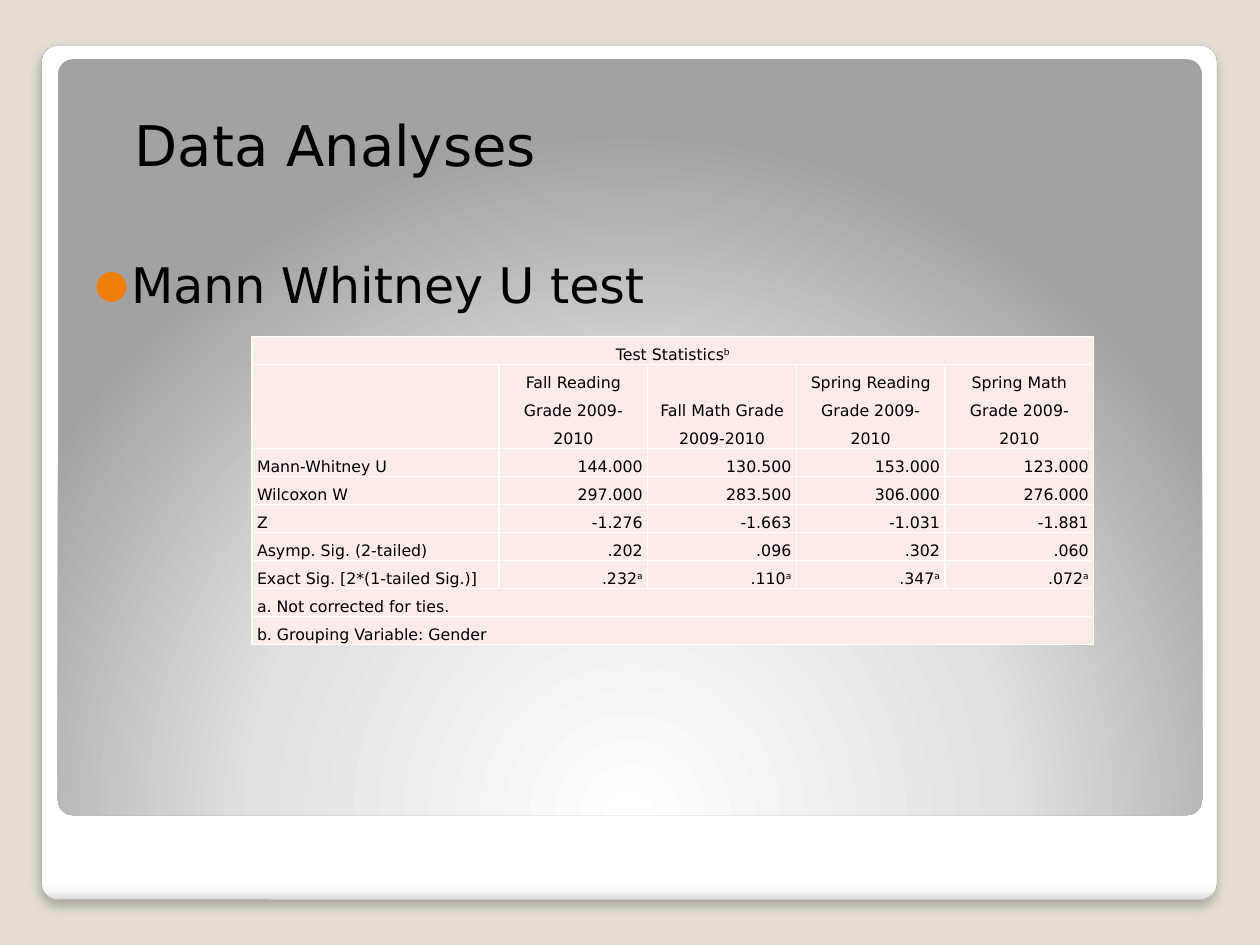
from dataclasses import dataclass

from lxml import etree
from pptx import Presentation
from pptx import util as u
from pptx.dml.color import RGBColor
from pptx.enum import shapes, text
from pptx.oxml import ns


@dataclass(frozen=True)
class Theme:
    font: str = "DejaVu Sans"
    ink: str = "000000"
    background: str = "E3DED1"
    card_edge: str = "A4A4A4"
    bullet: str = "F07F09"
    cell: str = "FCECE7"
    border: str = "FFFFFF"
    card_stops: tuple = ((0, "FFFFFF"), (98, "FFFFFF"), (99, "F7F7F7"), (100, "DADADA"))
    panel_stops: tuple = ((0, "FFFFFF"), (55, "E1E1E1"), (100, "A2A2A2"))
    title_size: int = 32
    body_size: int = 28
    table_size: int = 9
    table_leading: int = 16


THEME = Theme()
ALIGN = text.PP_ALIGN
ANCHOR = text.MSO_ANCHOR

HEADERS = ["", "Fall Reading Grade 2009-2010", "Fall Math Grade 2009-2010",
           "Spring Reading Grade 2009-2010", "Spring Math Grade 2009-2010"]
# A caret marks the start of a superscript
RESULTS = [
    ["Mann-Whitney U", "144.000", "130.500", "153.000", "123.000"],
    ["Wilcoxon W", "297.000", "283.500", "306.000", "276.000"],
    ["Z", "-1.276", "-1.663", "-1.031", "-1.881"],
    ["Asymp. Sig. (2-tailed)", ".202", ".096", ".302", ".060"],
    ["Exact Sig. [2*(1-tailed Sig.)]", ".232^a", ".110^a", ".347^a", ".072^a"],
]
TABLE_ROWS = [["Test Statistics^b"], HEADERS, *RESULTS,
              ["a. Not corrected for ties."], ["b. Grouping Variable: Gender"]]


def xml(markup):
    """Turn DrawingML markup into an element, with its namespace declared."""
    return etree.fromstring(f"<root {ns.nsdecls('a')}>{markup}</root>")[0]


def write_text(frame, content, size, align=ALIGN.LEFT, leading=None, before=None):
    paragraph = frame.paragraphs[0]
    paragraph.alignment = align
    if leading:
        paragraph.line_spacing = u.Pt(leading)
    if before:
        paragraph.space_before = u.Pt(before)
    for index, part in enumerate(content.split("^")):
        run = paragraph.add_run()
        run.text = part
        run.font.name = THEME.font
        run.font.size = u.Pt(size)
        run.font.color.rgb = RGBColor.from_string(THEME.ink)
        if index:
            run.font._element.set("baseline", "30000")
    return paragraph


def set_margins(target, left, top, right, bottom):
    target.margin_left, target.margin_top = u.Inches(left), u.Inches(top)
    target.margin_right, target.margin_bottom = u.Inches(right), u.Inches(bottom)


def add_panel(slide, box, stops, direction):
    """Add a rounded rectangle with a gradient fill."""
    shape = slide.shapes.add_shape(
        shapes.MSO_SHAPE.ROUNDED_RECTANGLE, *map(u.Inches, box))
    shape.adjustments[0] = 0.02
    shape.shadow.inherit = False
    stop_markup = "".join(
        f'<a:gs pos="{position * 1000}"><a:srgbClr val="{color}"/></a:gs>'
        for position, color in stops)
    gradient = xml(f'<a:gradFill rotWithShape="1"><a:gsLst>{stop_markup}</a:gsLst>'
                   f'{direction}</a:gradFill>')
    shape._element.spPr.find(ns.qn("a:prstGeom")).addnext(gradient)
    return shape


def add_backdrop(slide, card_box, panel_box):
    # White card with a soft shadow
    card = add_panel(slide, card_box, THEME.card_stops, '<a:lin ang="5400000" scaled="0"/>')
    card.line.color.rgb = RGBColor.from_string(THEME.card_edge)
    card.line.width = u.Pt(0.16)
    card._element.spPr.find(ns.qn("a:effectLst")).append(xml(
        f'<a:outerShdw blurRad="{u.Pt(6)}" dist="{u.Pt(4)}" dir="5400000" rotWithShape="0">'
        '<a:srgbClr val="000000"><a:alpha val="25000"/></a:srgbClr></a:outerShdw>'))
    # Grey panel lit from below
    panel = add_panel(
        slide, panel_box, THEME.panel_stops,
        '<a:path path="circle"><a:fillToRect l="50000" t="175000" r="50000" b="-75000"/></a:path>')
    panel.line.fill.background()


def add_body(slide, box):
    frame = slide.shapes.add_textbox(*map(u.Inches, box)).text_frame
    frame.word_wrap = True
    set_margins(frame, 0.2, 0.1, 0.1, 0.05)
    paragraph = write_text(frame, "Mann Whitney U test", THEME.body_size, before=2.5)
    properties = paragraph._p.get_or_add_pPr()
    properties.set("marL", str(u.Inches(0.29)))
    properties.set("indent", str(u.Inches(-0.29)))
    for markup in (f'<a:buClr><a:srgbClr val="{THEME.bullet}"/></a:buClr>',
                   '<a:buSzPct val="80000"/>',
                   f'<a:buFont typeface="{THEME.font}"/>',
                   '<a:buChar char="●"/>'):
        properties.append(xml(markup))


def place_title(slide, box):
    title = slide.shapes.title
    title.left, title.top, title.width, title.height = map(u.Inches, box)
    frame = title.text_frame
    frame.word_wrap = True
    frame.auto_size = text.MSO_AUTO_SIZE.SHAPE_TO_FIT_TEXT
    frame.vertical_anchor = ANCHOR.TOP
    set_margins(frame, 1.07, 0.05, 0.1, 0.05)
    write_text(frame, "Data Analyses", THEME.title_size)
    # Bring the title in front of the backdrop
    title._element.getparent().append(title._element)


def format_cell(cell):
    cell.fill.solid()
    cell.fill.fore_color.rgb = RGBColor.from_string(THEME.cell)
    set_margins(cell, 0.04, 0, 0.04, 0)
    properties = cell._tc.get_or_add_tcPr()
    for index, side in enumerate("LRTB"):
        properties.insert(index, xml(
            f'<a:ln{side} w="{u.Pt(1)}"><a:solidFill><a:srgbClr val="{THEME.border}"/>'
            f'</a:solidFill></a:ln{side}>'))


def add_statistics_table(slide, box):
    column_count = len(HEADERS)
    table = slide.shapes.add_table(
        len(TABLE_ROWS), column_count, *map(u.Inches, box)).table
    table.first_row = table.horz_banding = False
    for index, column in enumerate(table.columns):
        column.width = u.Inches(1.18 if index else 1.96)
    for row_index, values in enumerate(TABLE_ROWS):
        is_header = values is HEADERS
        table.rows[row_index].height = u.Inches(0.66 if is_header else 0.22)
        for column_index in range(column_count):
            format_cell(table.cell(row_index, column_index))
        if len(values) == 1:
            table.cell(row_index, 0).merge(table.cell(row_index, column_count - 1))
        for column_index, value in enumerate(values):
            cell = table.cell(row_index, column_index)
            align = ALIGN.RIGHT if column_index else ALIGN.LEFT
            if row_index == 0 or is_header:
                align = ALIGN.CENTER
                cell.vertical_anchor = ANCHOR.BOTTOM if is_header else ANCHOR.MIDDLE
            if value:
                write_text(cell.text_frame, value, THEME.table_size, align=align,
                           leading=THEME.table_leading)


def main():
    presentation = Presentation()
    presentation.slide_width, presentation.slide_height = u.Inches(10), u.Inches(7.5)
    slide = presentation.slides.add_slide(presentation.slide_layouts.get_by_name("Title Only"))
    slide.background.fill.solid()
    slide.background.fill.fore_color.rgb = RGBColor.from_string(THEME.background)
    add_backdrop(slide, (0.33, 0.36, 9.33, 6.78), (0.46, 0.47, 9.08, 6))
    add_body(slide, (0.55, 1.92, 8.95, 4.58))
    place_title(slide, (0, 0.83, 10, 0.64))
    add_statistics_table(slide, (2, 2.67, 6.67, 2.44))
    presentation.save("out.pptx")


if __name__ == "__main__":
    main()
